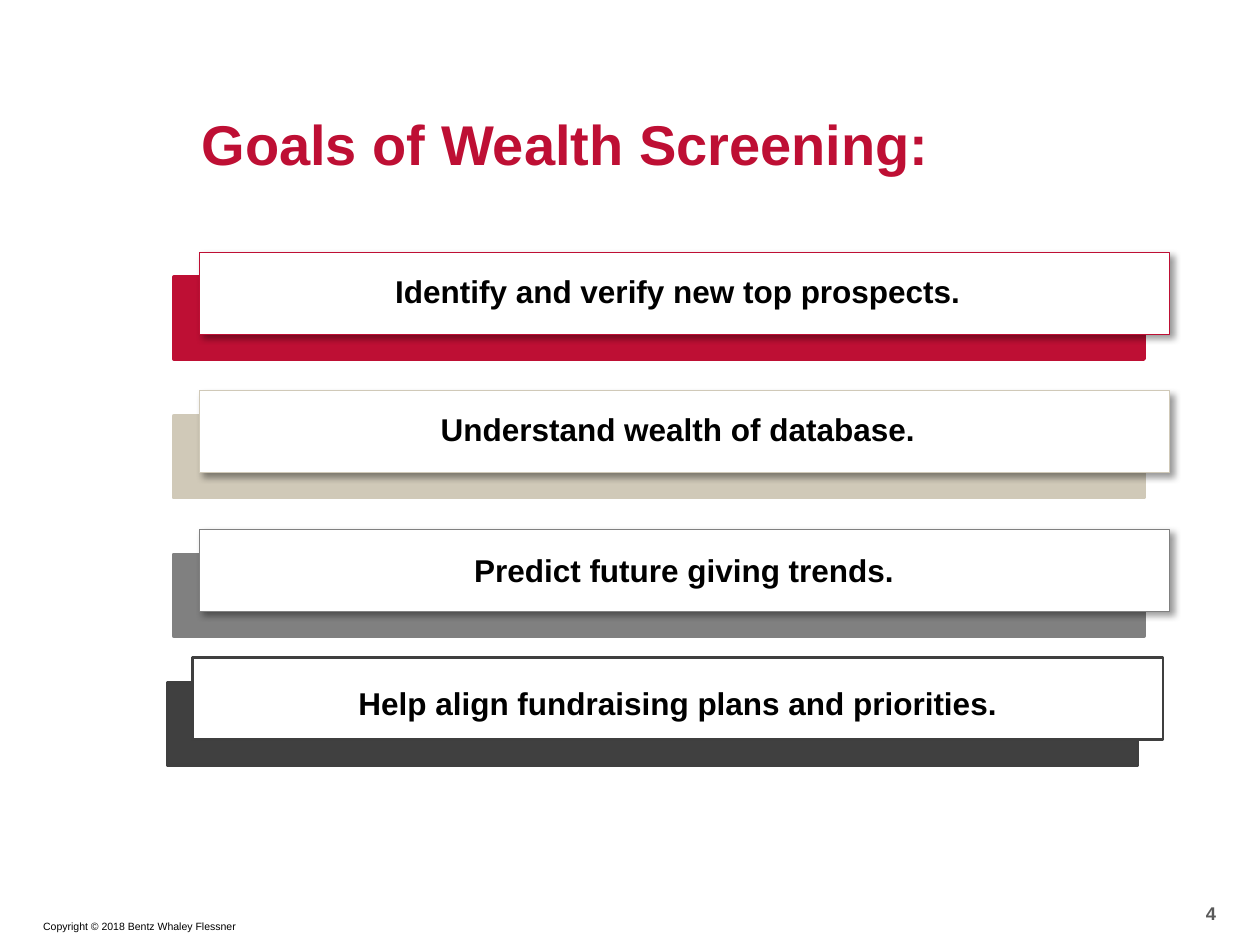
"""Build the slide listing the goals of wealth screening as offset cards."""
from lxml import etree
from pptx import Presentation
from pptx import util as u
from pptx.dml.color import RGBColor
from pptx.enum import shapes, text
from pptx.oxml import parse_xml
from pptx.oxml.ns import nsdecls, qn

TITLE = "Goals of Wealth Screening:"
COPYRIGHT = "Copyright © 2018 Bentz Whaley Flessner"
PAGE_NUMBER = "4"
GOALS = [
    dict(text="Identify and verify new top prospects.", color="BE0F34",
         card=(1.58, 2.0), label=(1.58, 2.0)),
    dict(text="Understand wealth of database.", color="D0C9B8",
         card=(1.58, 3.1), label=(1.58, 3.1)),
    dict(text="Predict future giving trends.", color="808080",
         card=(1.58, 4.2), label=(1.63, 4.22)),
    dict(text="Help align fundraising plans and priorities.", color="404040",
         edge="3F3F3F", card=(1.53, 5.22), label=(1.58, 5.27),
         card_line=1.5, shadow=False),
]
THEME = dict(font="Arial", title="BE0F34", ink="000000", number="595959", paper="FFFFFF",
             title_size=32, goal_size=18, number_size=10.5, copyright_size=6)
CARD_SIZE = (7.7, 0.65)
LABEL_SIZE = (7.6, 0.61)
BACK_OFFSET = (-0.2, 0.2)
BACK_LINE, CARD_LINE = 2, 0.25


def write(shape, content, size, color, align, bold=True, anchor=text.MSO_ANCHOR.MIDDLE):
    frame = shape.text_frame
    frame.text = content
    frame.word_wrap = True
    frame.auto_size = text.MSO_AUTO_SIZE.NONE
    frame.vertical_anchor = anchor
    paragraph = frame.paragraphs[0]
    paragraph.alignment = align
    font = paragraph.runs[0].font
    font.name, font.size, font.bold = THEME["font"], u.Pt(size), bold
    font.color.rgb = RGBColor.from_string(color)


def add_label(slide, place, *style, **options):
    write(slide.shapes.add_textbox(*map(u.Inches, place)), *style, **options)


def add_bar(slide, place, fill, line, width):
    bar = slide.shapes.add_shape(shapes.MSO_SHAPE.RECTANGLE, *map(u.Inches, place))
    bar.shadow.inherit = False
    bar.fill.solid()
    bar.fill.fore_color.rgb = RGBColor.from_string(fill)
    bar.line.color.rgb = RGBColor.from_string(line)
    bar.line.width = u.Pt(width)
    return bar


def add_shadow(shape):
    effects = shape.element.spPr.find(qn("a:effectLst"))
    effects.append(parse_xml(
        f'<a:outerShdw {nsdecls("a")} blurRad="{u.Pt(4)}" dist="{u.Pt(3)}" dir="2700000" '
        'algn="tl" rotWithShape="0"><a:srgbClr val="000000"><a:alpha val="40000"/>'
        '</a:srgbClr></a:outerShdw>'))


def add_goal(slide, goal):
    left, top = goal["card"]
    edge = goal.get("edge", goal["color"])
    back = (left + BACK_OFFSET[0], top + BACK_OFFSET[1])
    add_bar(slide, back + CARD_SIZE, goal["color"], edge, BACK_LINE)
    card = add_bar(slide, goal["card"] + CARD_SIZE, THEME["paper"], edge,
                   goal.get("card_line", CARD_LINE))
    if goal.get("shadow", True):
        add_shadow(card)
    add_label(slide, goal["label"] + LABEL_SIZE, goal["text"], THEME["goal_size"],
              THEME["ink"], text.PP_ALIGN.CENTER)


def main():
    presentation = Presentation()
    presentation.slide_width, presentation.slide_height = u.Inches(10), u.Inches(7.5)
    slide = presentation.slides.add_slide(presentation.slide_layouts[5])
    title = slide.shapes.title
    title.left, title.top, title.width, title.height = map(u.Inches, (1.5, 0.82, 7.75, 0.93))
    write(title, TITLE, THEME["title_size"], THEME["title"], text.PP_ALIGN.LEFT,
          anchor=text.MSO_ANCHOR.TOP)
    for goal in GOALS:
        add_goal(slide, goal)
    add_label(slide, (7.92, 7.08, 1.83, 0.33), PAGE_NUMBER, THEME["number_size"],
              THEME["number"], text.PP_ALIGN.RIGHT)
    add_label(slide, (-0.45, 7.25, 2.42, 0.2), COPYRIGHT, THEME["copyright_size"],
              THEME["ink"], text.PP_ALIGN.RIGHT, bold=False, anchor=text.MSO_ANCHOR.TOP)
    presentation.save("out.pptx")


if __name__ == "__main__":
    main()
